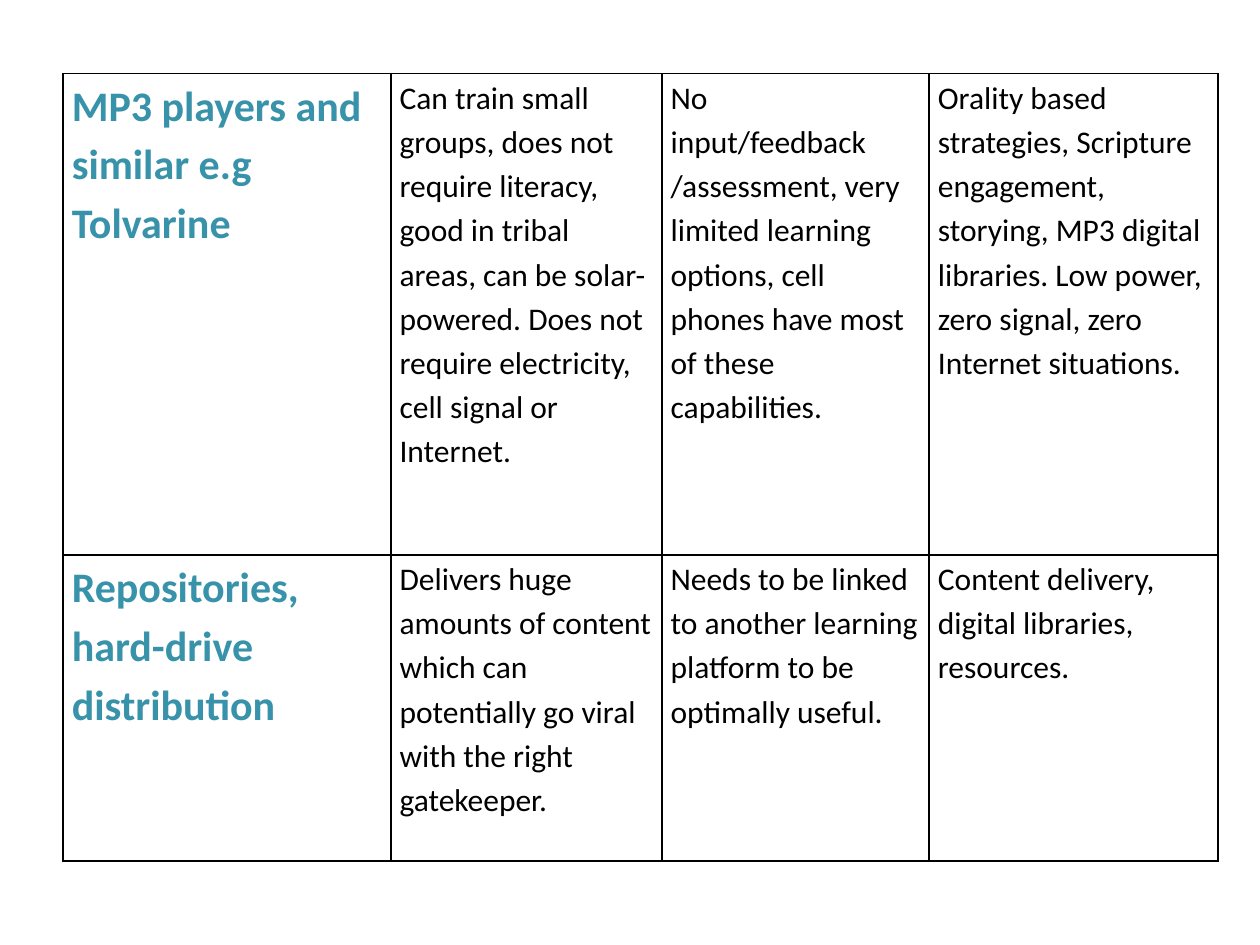
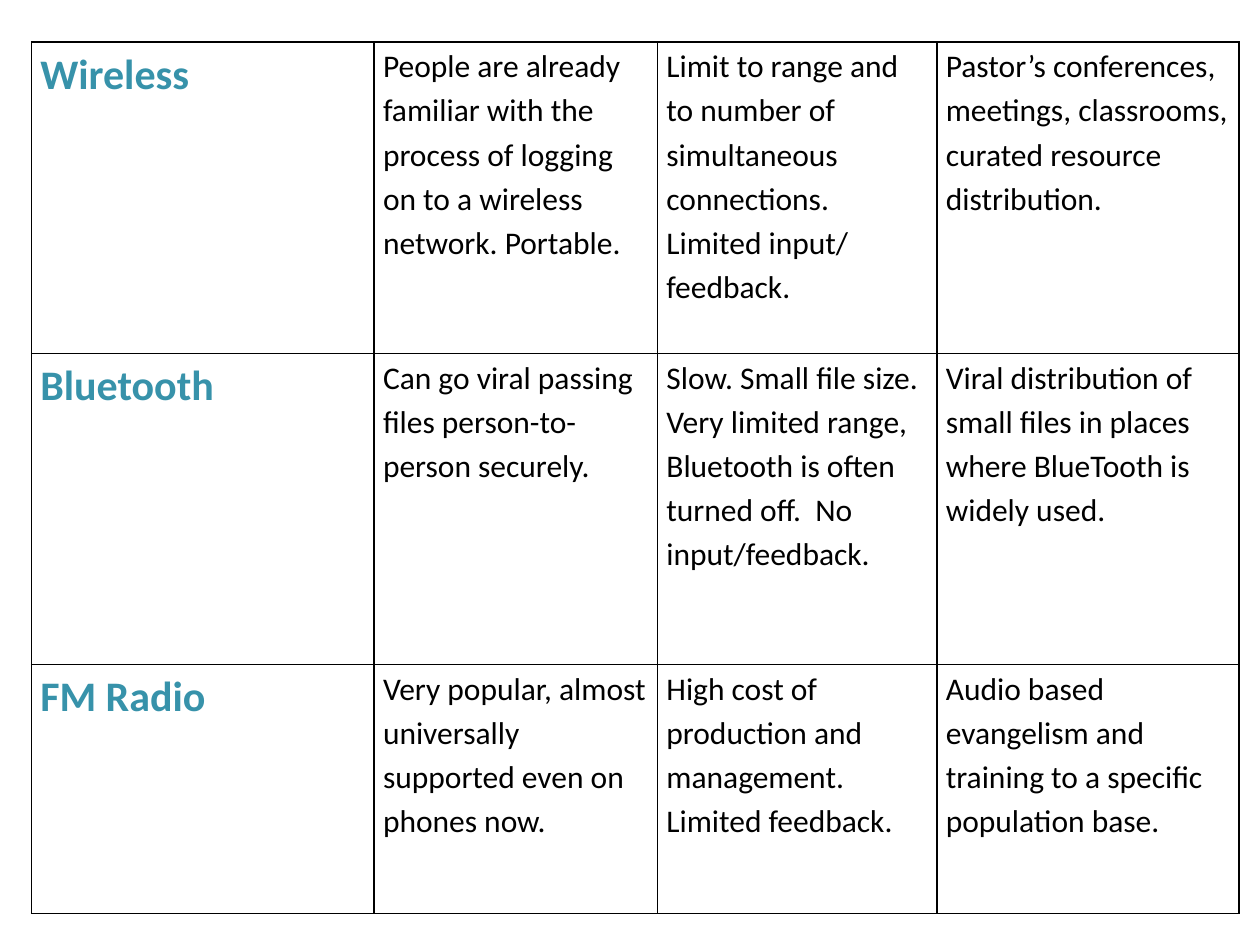
from dataclasses import dataclass

from lxml import etree
from pptx import Presentation
from pptx import util as u
from pptx.dml.color import RGBColor
from pptx.enum import text
from pptx.oxml import ns

TEAL = RGBColor(0x37, 0x92, 0xAA)
BLACK = RGBColor(0x00, 0x00, 0x00)
FONT = "Calibri"

SLIDE_WIDTH, SLIDE_HEIGHT = u.Inches(10), u.Inches(7.5)
GRID_COLUMNS, GRID_ROWS = 120, 90
COLUMN_WEIGHTS = (2.6, 2.15, 2.12, 2.29)


@dataclass(frozen=True)
class Technology:
    name: str
    strengths: str
    limits: str
    uses: str
    height_weight: float


@dataclass(frozen=True)
class ComparisonTable:
    """A table placed in grid columns and rows of the slide."""
    column: int
    row: int
    column_span: int
    row_span: int
    technologies: tuple[Technology, ...]


TABLES = (
    ComparisonTable(6, 7, 110, 75, (
        Technology(
            "MP3 players and similar e.g Tolvarine",
            "Can train small groups, does not require literacy, good in tribal areas, "
            "can be solar-powered. Does not require electricity, cell signal or Internet.",
            "No input/feedback /assessment, very limited learning options, "
            "cell phones have most of these capabilities.",
            "Orality based strategies, Scripture engagement, storying, MP3 digital libraries. "
            "Low power, zero signal, zero Internet situations.",
            3.82),
        Technology(
            "Repositories, hard-drive distribution",
            "Delivers huge amounts of content which can potentially go viral "
            "with the right gatekeeper.",
            "Needs to be linked to another learning platform to be optimally useful.",
            "Content delivery, digital libraries, resources.",
            2.43),
    )),
    ComparisonTable(3, 4, 115, 83, (
        Technology(
            "Wireless",
            "People are already familiar with the process of logging on to a wireless network. "
            "Portable.",
            "Limit to range and to number of simultaneous connections. Limited input/ feedback.",
            "Pastor’s conferences, meetings, classrooms, curated resource distribution.",
            1.25),
        Technology(
            "Bluetooth",
            "Can go viral passing files person-to-person securely.",
            "Slow. Small file size. Very limited range, Bluetooth is often turned off.  "
            "No input/feedback.",
            "Viral distribution of small files in places where BlueTooth is widely used.",
            1.25),
        Technology(
            "FM Radio",
            "Very popular, almost universally supported even on phones now.",
            "High cost of production and management. Limited feedback.",
            "Audio based evangelism and training to a specific population base.",
            1),
    )),
)


def grid_x(columns: float) -> int:
    return round(SLIDE_WIDTH * columns / GRID_COLUMNS)


def grid_y(rows: float) -> int:
    return round(SLIDE_HEIGHT * rows / GRID_ROWS)


def share_out(total: int, weights) -> list[int]:
    """Split a length in proportion to the weights."""
    return [round(total * weight / sum(weights)) for weight in weights]


def write_text(frame, words: str, *, size: float = 18, color: RGBColor = BLACK,
               bold: bool = False) -> None:
    paragraph = frame.paragraphs[0]
    paragraph.alignment = text.PP_ALIGN.LEFT
    paragraph.line_spacing = 1.15
    run = paragraph.add_run()
    run.text = words
    run.font.name = FONT
    run.font.size = u.Pt(size)
    run.font.bold = bold
    run.font.color.rgb = color


def draw_borders(cell, color: RGBColor = BLACK, width: float = 1) -> None:
    properties = cell._tc.get_or_add_tcPr()
    for side in ("a:lnL", "a:lnR", "a:lnT", "a:lnB"):
        line = etree.SubElement(properties, ns.qn(side), w=str(u.Pt(width)))
        fill = etree.SubElement(line, ns.qn("a:solidFill"))
        etree.SubElement(fill, ns.qn("a:srgbClr"), val=str(color))


def format_cell(cell) -> None:
    cell.margin_left = cell.margin_right = u.Inches(0.07)
    cell.margin_top = cell.margin_bottom = 0
    cell.vertical_anchor = text.MSO_ANCHOR.TOP
    draw_borders(cell)
    cell.fill.background()


def add_comparison(slide, layout: ComparisonTable) -> None:
    width, height = grid_x(layout.column_span), grid_y(layout.row_span)
    table = slide.shapes.add_table(
        len(layout.technologies), len(COLUMN_WEIGHTS),
        grid_x(layout.column), grid_y(layout.row), width, height).table
    table.first_row = table.horz_banding = False

    for column, column_width in zip(table.columns, share_out(width, COLUMN_WEIGHTS)):
        column.width = column_width
    heights = share_out(height, [item.height_weight for item in layout.technologies])
    for row, row_height, item in zip(table.rows, heights, layout.technologies):
        row.height = row_height
        name_cell, *detail_cells = row.cells
        write_text(name_cell.text_frame, item.name, size=24, color=TEAL, bold=True)
        for cell, words in zip(detail_cells, (item.strengths, item.limits, item.uses)):
            write_text(cell.text_frame, words)
        for cell in row.cells:
            format_cell(cell)


def main() -> None:
    presentation = Presentation()
    presentation.slide_width, presentation.slide_height = SLIDE_WIDTH, SLIDE_HEIGHT
    blank_layout = presentation.slide_layouts[6]
    for layout in TABLES:
        add_comparison(presentation.slides.add_slide(blank_layout), layout)
    presentation.save("out.pptx")


if __name__ == "__main__":
    main()
